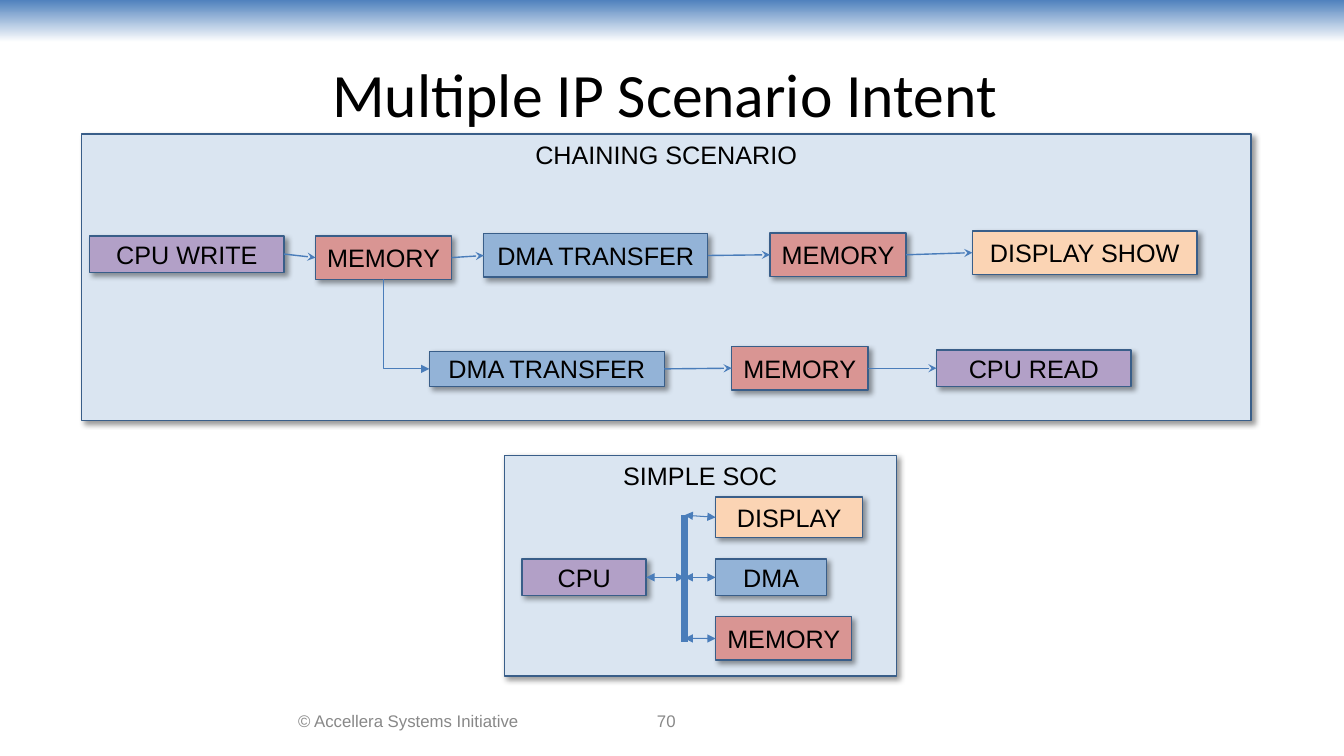
from lxml import etree
from pptx import Presentation
from pptx.dml.color import RGBColor
from pptx.enum import shapes, text
from pptx.oxml import parse_xml
from pptx.oxml.ns import nsdecls, qn
from pptx.util import Pt

HUES = {"panel": "DAE5F1", "cpu": "B2A0C7", "mem": "D99593", "dma": "93B3D7",
        "show": "FBD4B4", "edge": "395E89", "wire": "4A7DBA", "band": "4F81BD",
        "white": "FFFFFF", "black": "000000", "gray": "888888"}
RGB = {name: RGBColor.from_string(hue) for name, hue in HUES.items()}
TOP, LEFT, LOW, RIGHT = range(4)  # connection sites of a rectangle
SHADOW = f"""<a:effectLst {nsdecls('a')}>
  <a:outerShdw blurRad="{Pt(4)}" dist="{Pt(3)}" dir="2700000" rotWithShape="0">
    <a:srgbClr val="{HUES['black']}"><a:alpha val="40000"/></a:srgbClr>
  </a:outerShdw></a:effectLst>"""

deck = Presentation()
deck.slide_width, deck.slide_height = Pt(960), Pt(540)
slide = deck.slides.add_slide(deck.slide_layouts[5])
tree = slide.shapes


def write(shape, words, size=18, face="Arial", hue="black", anchor="MIDDLE"):
    frame = shape.text_frame
    frame.text = words
    form = {"word_wrap": True, "auto_size": text.MSO_AUTO_SIZE.NONE,
            "vertical_anchor": text.MSO_ANCHOR[anchor]}
    for key, value in form.items():
        setattr(frame, key, value)
    line = frame.paragraphs[0]
    line.alignment = text.PP_ALIGN.CENTER
    line.font.size, line.font.name = Pt(size), face
    line.font.color.rgb = RGB[hue]


def wire(start, end, width=0.75, head=None, tail=None, kind="STRAIGHT"):
    """Draw a line between two points given in points, with optional arrowheads."""
    line = tree.add_connector(shapes.MSO_CONNECTOR[kind], *map(Pt, start + end))
    line.line.width = Pt(width)
    line.line.color.rgb = RGB["wire"]
    props = line._element.spPr
    for tag, tip in (("a:headEnd", head), ("a:tailEnd", tail)):
        if tip:
            etree.SubElement(props.find(qn("a:ln")), qn(tag), type=tip)
    etree.SubElement(props, qn("a:effectLst"))
    return line


# Header band and title
band = tree.add_shape(shapes.MSO_SHAPE.RECTANGLE, 0, 0, Pt(960), Pt(30.2))
band.shadow.inherit = False
band.line.fill.background()
band.fill.gradient()
band.fill.gradient_angle = 270
for stop, hue in zip(band.fill.gradient_stops, ("band", "white")):
    stop.color.rgb = RGB[hue]

title = tree.title
title.left, title.top, title.width, title.height = map(Pt, (48, 21.6, 864, 90))
write(title, "Multiple IP Scenario Intent ", 44, "Calibri")

# Panels and blocks: key, words, hue, left, top, width, height
BLOCKS = [
    ("chain", "CHAINING SCENARIO", "panel", 58.3, 95.8, 835.2, 204.5),
    ("write", "CPU WRITE", "cpu", 64, 168.5, 139, 26),
    ("mem1", "MEMORY", "mem", 225.4, 168.5, 97.2, 31),
    ("dma1", "DMA TRANSFER", "dma", 345.6, 167, 160, 31),
    ("mem2", "MEMORY", "mem", 550, 166.5, 97.2, 31),
    ("show", "DISPLAY SHOW", "show", 694.6, 165, 160.5, 31),
    ("dma2", "DMA TRANSFER", "dma", 306.7, 251, 167.8, 25),
    ("mem3", "MEMORY", "mem", 522.7, 247.5, 97.2, 31),
    ("read", "CPU READ", "cpu", 669, 250, 139, 26),
    ("soc", "SIMPLE SOC", "panel", 360.2, 325.2, 280, 157.6),
    ("cpu", "CPU", "cpu", 373, 399.4, 88.6, 26),
    ("disp", "DISPLAY", "show", 511.2, 355, 105, 29),
    ("dma", "DMA", "dma", 511.2, 399.4, 79.2, 26),
    ("mem", "MEMORY", "mem", 511.2, 440.6, 97.2, 31),
]
nodes = {}
for key, words, hue, *spot in BLOCKS:
    node = tree.add_shape(shapes.MSO_SHAPE.RECTANGLE, *map(Pt, spot))
    node.fill.solid()
    node.fill.fore_color.rgb = RGB[hue]
    node.line.color.rgb = RGB["edge"]
    node.line.width = Pt(1)
    node._element.spPr.append(parse_xml(SHADOW))
    write(node, words, anchor="TOP" if hue == "panel" else "MIDDLE")
    nodes[key] = node

# Chained steps, joined left to right
for row in (("write", "mem1", "dma1", "mem2", "show"), ("dma2", "mem3", "read")):
    for one, two in zip(row, row[1:]):
        link = wire((0, 0), (0, 0), 1, tail="stealth")
        link.begin_connect(nodes[one], RIGHT)
        link.end_connect(nodes[two], LEFT)

# Branch from the first memory down to the second transfer
fork = wire((0, 0), (0, 0), tail="triangle", kind="ELBOW")
fork.begin_connect(nodes["mem1"], LOW)
fork.end_connect(nodes["dma2"], LEFT)
wide, high = fork.width, fork.height
fork.left += (wide - high) // 2
fork.top += (high - wide) // 2
fork.width, fork.height = high, wide
props = fork._element.spPr
props.find(qn("a:prstGeom")).set("prst", "bentConnector2")
for name, value in {"rot": "16200000", "flipH": "1"}.items():
    props.find(qn("a:xfrm")).set(name, value)

# Bus with a two-way link to each unit
bus = 489
wire((bus, 368), (bus, 458.6), 4.5)
for key, level, site in (("cpu", 412.4, RIGHT), ("disp", 368, LEFT),
                         ("dma", 412.4, LEFT), ("mem", 456, LEFT)):
    link = wire((bus, level), (bus, level), head="triangle", tail="triangle")
    link.end_connect(nodes[key], site)

# Footer
for words, left, width in (("© Accellera Systems Initiative", 175.7, 232),
                           ("70", 383.8, 184.3)):
    note = tree.add_textbox(Pt(left), Pt(500.4), Pt(width), Pt(28.8))
    write(note, words, 12, hue="gray")

deck.save("out.pptx")
